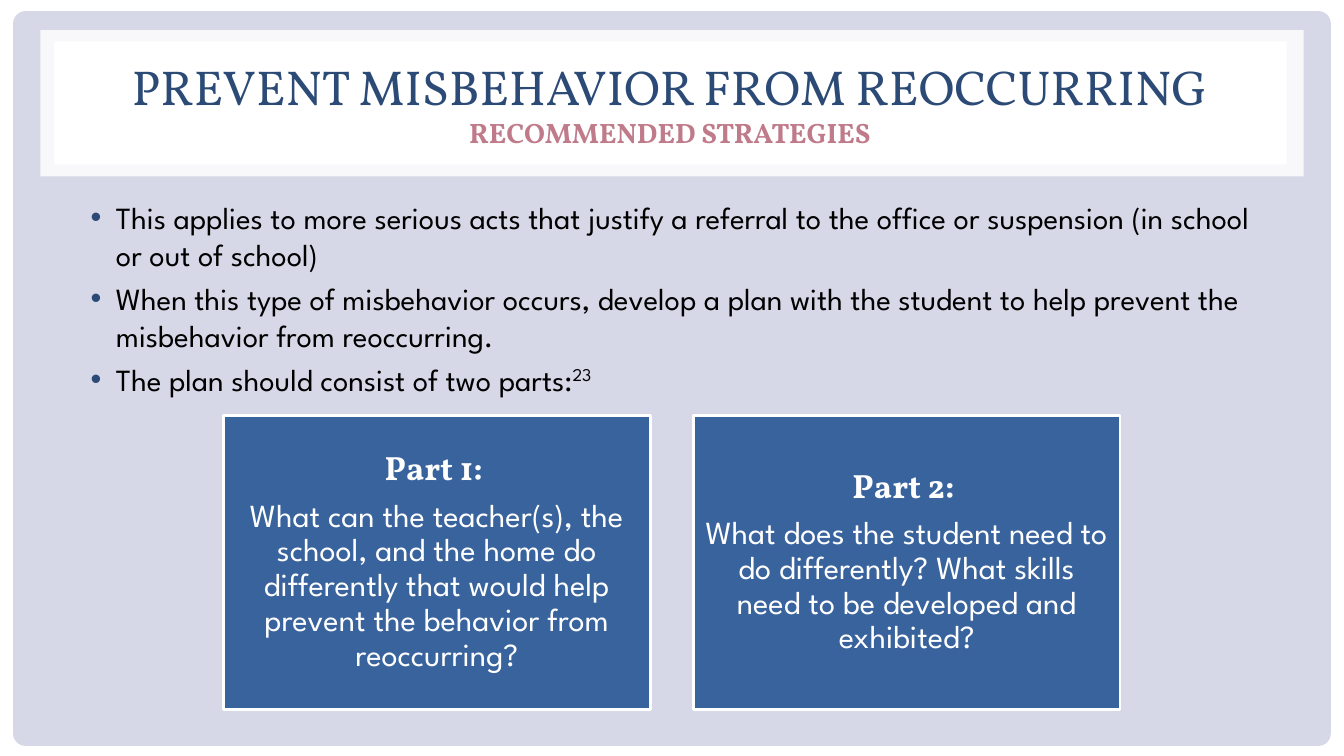
from copy import deepcopy

from lxml.etree import SubElement
from pptx import Presentation
from pptx.dml.color import RGBColor
from pptx.enum.shapes import MSO_SHAPE
from pptx.enum.text import MSO_ANCHOR, MSO_AUTO_SIZE, PP_ALIGN
from pptx.oxml.ns import qn
from pptx.util import Emu, Pt

PX = 9144  # one hundred px to the inch

NAVY, ROSE, BLUE = "2B4A76", "C07B8A", "39639D"
LAVENDER, WHITE, BLACK = "D7D8E7", "FFFFFF", "000000"
SERIF, SANS = "Vollkorn", "League Spartan"

BULLETS = [
    ("This applies to more serious acts that justify a referral to the office "
     "or suspension (in school or out of school)", ""),
    ("When this type of misbehavior occurs, develop a plan with the student "
     "to help prevent the misbehavior from reoccurring.", ""),
    ("The plan should consist of two parts:", "23"),
]
PARTS = [
    ("Part 1: ", "What can the teacher(s), the school, and the home do differently "
     "that would help prevent the behavior from reoccurring?"),
    ("Part 2: ", "What does the student need to do differently? What skills need "
     "to be developed and exhibited?"),
]


def px(length):
    return Emu(length * PX)


def color(value):
    return RGBColor.from_string(value)


def apply(target, **values):
    for name, value in values.items():
        setattr(target, name, value)


def place(box, left, top, width, height):
    apply(box, left=px(left), top=px(top), width=px(width), height=px(height))


def add_span(para, text, size, face, ink, bold=False):
    span = para.add_run()
    span.text = text
    apply(span.font, size=Pt(size), name=face, bold=bold)
    span.font.color.rgb = color(ink)
    return span


def add_panel(page, bounds, fill, shape=MSO_SHAPE.RECTANGLE, opacity=100):
    box = page.shapes.add_shape(shape, *map(px, bounds))
    box.shadow.inherit = False
    box.fill.solid()
    box.fill.fore_color.rgb = color(fill)
    box.line.fill.background()
    if opacity < 100:
        tint = box.fill._xPr.find(".//" + qn("a:srgbClr"))
        SubElement(tint, qn("a:alpha"), val=str(opacity * 1000))
    return box


def add_bullet(para):
    props = para._p.get_or_add_pPr()
    props.set("marL", str(px(38)))
    props.set("indent", str(px(-25)))
    tint = SubElement(props, qn("a:buClr"))
    SubElement(tint, qn("a:srgbClr"), val=NAVY)
    SubElement(props, qn("a:buChar"), char="•")


def fill_title(box):
    place(box, 62, 45, 1205, 114)
    frame = box.text_frame
    apply(frame, word_wrap=True, auto_size=MSO_AUTO_SIZE.NONE,
          vertical_anchor=MSO_ANCHOR.MIDDLE)
    para = frame.paragraphs[0]
    para.alignment = PP_ALIGN.CENTER
    heading = add_span(para, "PREVENT MISBEHAVIOR FROM REOCCURRING", 35, SERIF, NAVY)
    para.add_line_break()
    # The break takes the heading's size so the line keeps its height
    para._p[-1].append(deepcopy(heading._r.rPr))
    add_span(para, "RECOMMENDED STRATEGIES", 20, SERIF, ROSE, bold=True)


def fill_body(box):
    place(box, 67, 192, 1200, 478)
    frame = box.text_frame
    apply(frame, word_wrap=True, auto_size=MSO_AUTO_SIZE.NONE)
    for index, (text, note) in enumerate(BULLETS):
        para = frame.add_paragraph() if index else frame.paragraphs[0]
        para.space_before = Pt(5)
        add_bullet(para)
        add_span(para, text, 22, SANS, BLACK)
        if note:
            mark = add_span(para, note, 22, SANS, BLACK)
            mark.font._element.set("baseline", "30000")


def add_card(page, left, heading, question):
    box = add_panel(page, (left, 412, 423, 292), BLUE)
    box.line.color.rgb = color(WHITE)
    box.line.width = Pt(2)
    frame = box.text_frame
    inset = px(10)
    apply(frame, word_wrap=True, vertical_anchor=MSO_ANCHOR.MIDDLE,
          margin_left=inset, margin_top=inset, margin_right=inset, margin_bottom=inset)
    title, detail = frame.paragraphs[0], frame.add_paragraph()
    for para in (title, detail):
        apply(para, alignment=PP_ALIGN.CENTER, line_spacing=0.9, space_after=Pt(8))
    add_span(title, heading, 24, SERIF, WHITE, bold=True)
    add_span(detail, question, 23, SANS, WHITE)


def main():
    deck = Presentation()
    apply(deck, slide_width=px(1333), slide_height=px(750))
    page = deck.slides.add_slide(deck.slide_layouts[1])
    title, body = page.placeholders

    # Backdrop and title frame, kept behind the placeholders
    page.background.fill.solid()
    page.background.fill.fore_color.rgb = color(WHITE)
    backdrop = add_panel(page, (13, 11, 1307, 729), LAVENDER, MSO_SHAPE.ROUNDED_RECTANGLE)
    backdrop.adjustments[0] = 0.017
    frame = add_panel(page, (40, 30, 1253, 145), WHITE, opacity=83)
    plate = add_panel(page, (54, 41, 1222, 122), WHITE)
    for panel in (backdrop, frame, plate):
        title._element.addprevious(panel._element)

    # Title and list
    fill_title(title)
    fill_body(body)

    # The two parts of the plan
    for index, (heading, question) in enumerate(PARTS):
        add_card(page, 222 + index * 466, heading, question)

    deck.save("out.pptx")


if __name__ == "__main__":
    main()
